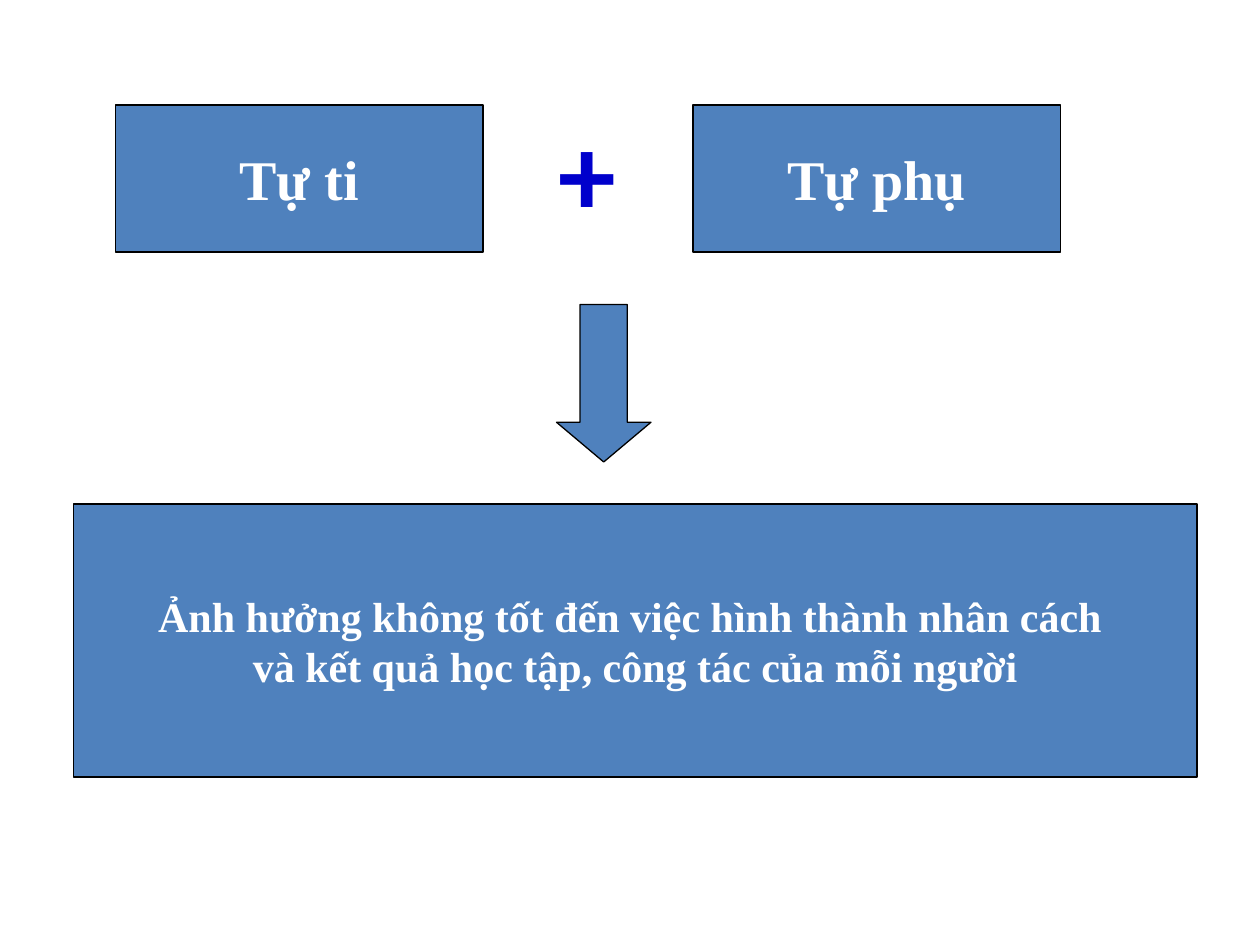
"""Build a slide showing how two attitudes lead to one shared consequence."""
from pptx import Presentation
from pptx.dml.color import RGBColor
from pptx.enum import shapes, text
from pptx.util import Pt

THEME = {
    "fill": RGBColor(0x4F, 0x81, 0xBD),
    "line": RGBColor(0, 0, 0),
    "label": RGBColor(255, 255, 255),
    "plus": RGBColor(0, 0, 0xCC),
    "label_size": Pt(32),
    "result_size": Pt(24),
    "plus_size": Pt(66),
    "label_font": "Times New Roman",
    "plus_font": "Calibri",
}


def add_block(page, kind, place):
    block = page.shapes.add_shape(kind, *map(Pt, place))
    block.shadow.inherit = False
    block.fill.solid()
    block.fill.fore_color.rgb = THEME["fill"]
    block.line.color.rgb = THEME["line"]
    block.line.width = Pt(0.75)
    return block


def write_lines(box, lines, align, color, frame_format, font_format):
    frame = box.text_frame
    for name, value in frame_format.items():
        setattr(frame, name, value)
    frame.text = "\n".join(lines)
    for para in frame.paragraphs:
        para.alignment = align
        for span in para.runs:
            span.font.color.rgb = color
            for name, value in font_format.items():
                setattr(span.font, name, value)


deck = Presentation()
deck.slide_width, deck.slide_height = Pt(720), Pt(540)
page = deck.slides.add_slide(deck.slide_layouts[6])

process = shapes.MSO_SHAPE.FLOWCHART_PROCESS
blocks = [
    (process, (66, 60, 210, 84), ["Tự ti"], THEME["label_size"]),
    (shapes.MSO_SHAPE.RECTANGLE, (42, 288, 642, 156),
     ["Ảnh hưởng không tốt đến việc hình thành nhân cách ",
      "và kết quả học tập, công tác của mỗi người"], THEME["result_size"]),
    (process, (396, 60, 210, 84), ["Tự phụ"], THEME["label_size"]),
]
for kind, place, lines, size in blocks:
    write_lines(
        add_block(page, kind, place), lines, text.PP_ALIGN.CENTER, THEME["label"],
        {"word_wrap": False, "vertical_anchor": text.MSO_ANCHOR.MIDDLE},
        {"name": THEME["label_font"], "size": size, "bold": True},
    )

plus = page.shapes.add_textbox(Pt(312), Pt(54), Pt(60), Pt(86.4))
write_lines(
    plus, ["+"], text.PP_ALIGN.LEFT, THEME["plus"],
    {"word_wrap": True, "auto_size": text.MSO_AUTO_SIZE.SHAPE_TO_FIT_TEXT},
    {"name": THEME["plus_font"], "size": THEME["plus_size"], "bold": True},
)

arrow = add_block(page, shapes.MSO_SHAPE.DOWN_ARROW, (318, 174, 54, 90))
arrow.adjustments[0] = 0.5
arrow.adjustments[1] = 0.42

deck.save("out.pptx")
